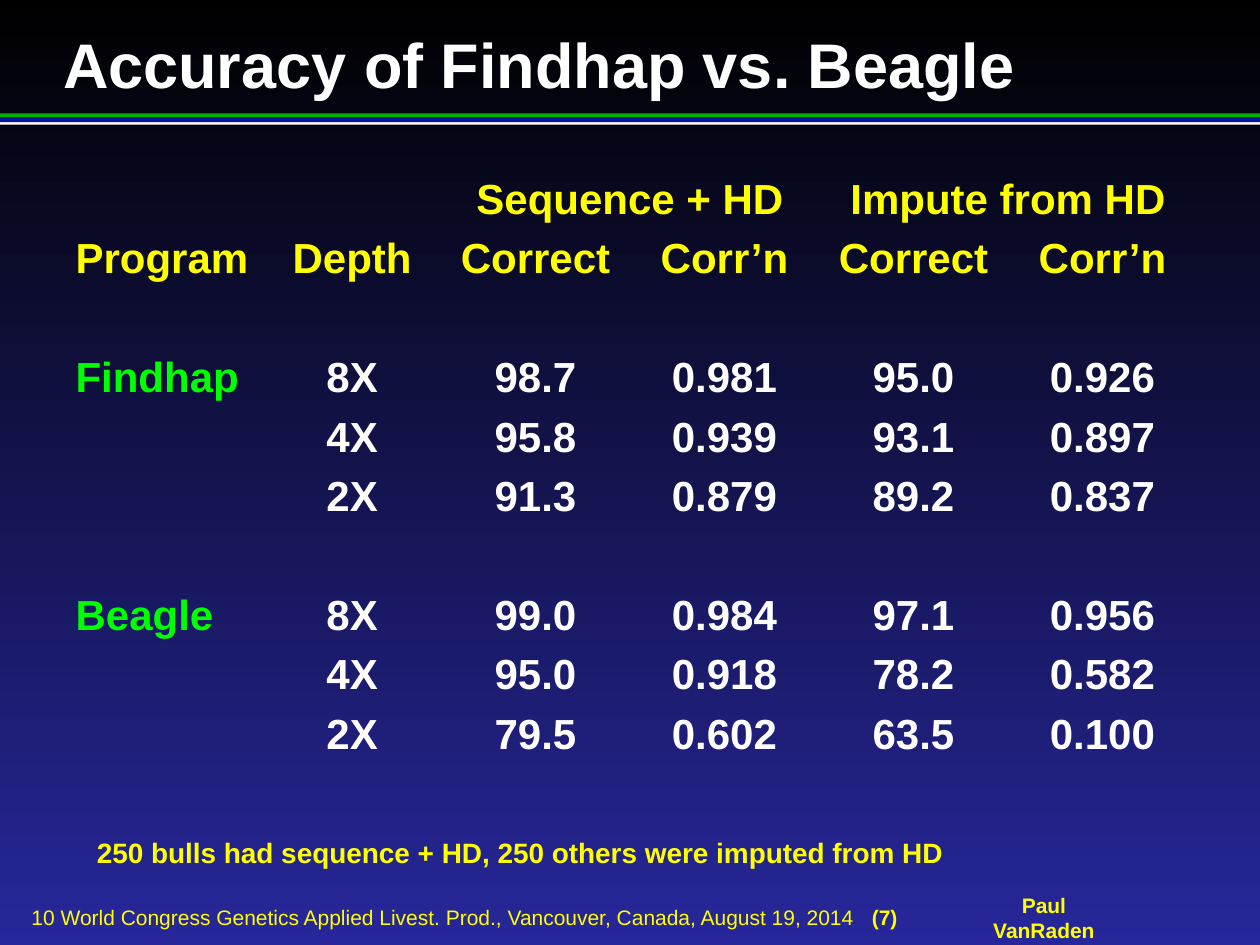
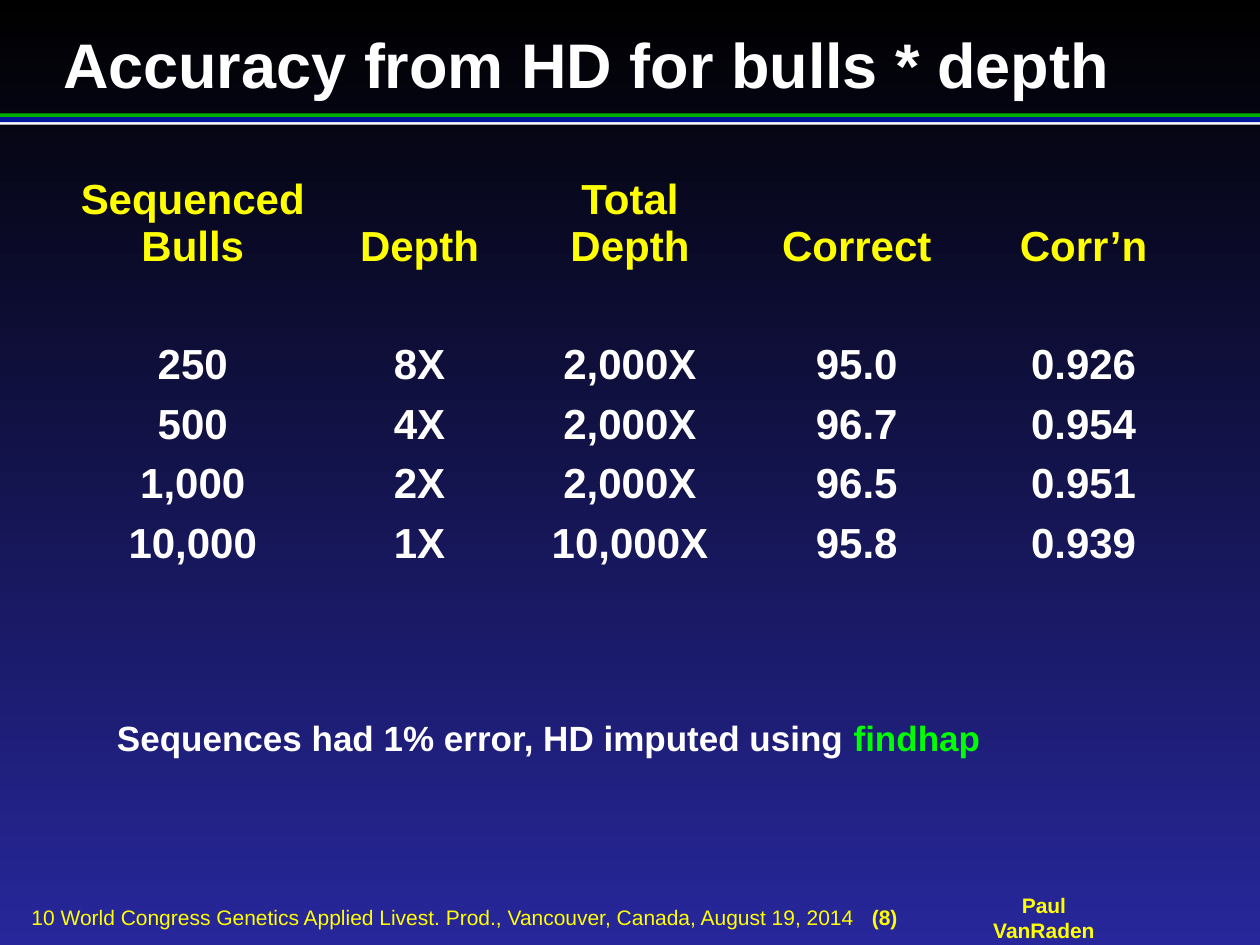
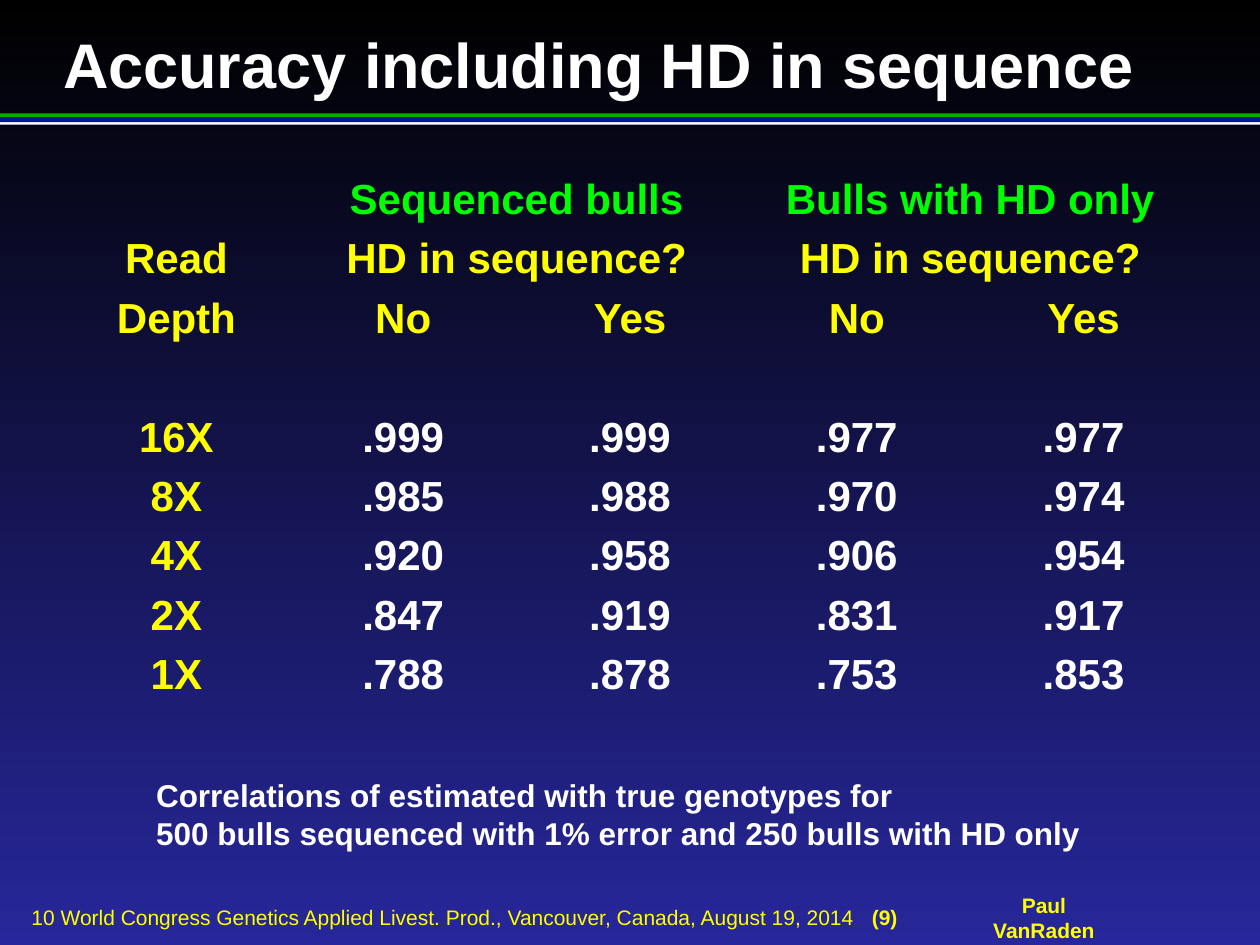
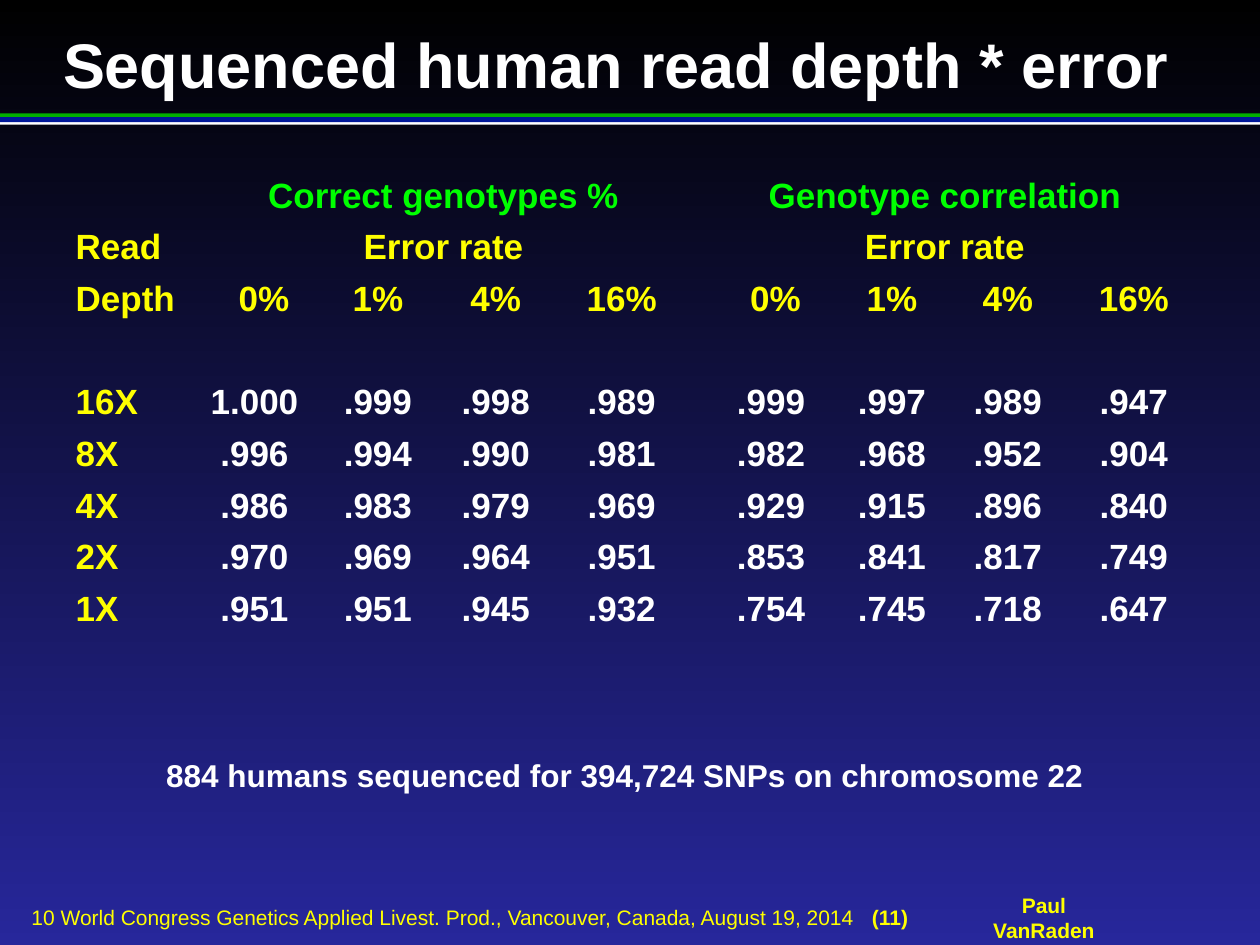
from lxml import etree
from pptx import Presentation
from pptx.dml.color import RGBColor
from pptx.enum.shapes import MSO_SHAPE
from pptx.enum.text import MSO_ANCHOR, PP_ALIGN
from pptx.oxml.ns import qn
from pptx.util import Inches, Pt

COLOURS = {
    "black": "000000",
    "indigo": "27279B",
    "band green": "01AF00",
    "band blue": "001799",
    "white": "FFFFFF",
    "yellow": "FFFF00",
    "green": "00FF00",
}
FONT = "Arial"
NO_GRID_STYLE = "{2D5ABB26-0587-4C30-8999-92F81FD0307C}"
BANDS = [("band green", 0.9, 0.03), ("white", 0.96, 0.03), ("band blue", 0.93, 0.04)]
AUTHOR = "Paul VanRaden"
CONFERENCE = "10 World Congress Genetics Applied Livest. Prod., Vancouver, Canada, August 19, 2014"

# In table rows, None continues the cell to its left.
# row_colours gives the leading rows; first_column and white colour the rest.
SLIDES = [
    {
        "title": "Accuracy of Findhap vs. Beagle",
        "number": 7,
        "columns": [1.59, 1.41, 1.5, 1.5, 1.5, 1.5],
        "size": 24,
        "row_height": 0.47,
        "row_colours": ["yellow", "yellow"],
        "first_column": "green",
        "left_aligned": True,
        "rows": [
            ["", "", "Sequence + HD", None, "Impute from HD", None],
            ["Program", "Depth", "Correct", "Corr’n", "Correct", "Corr’n"],
            [""] * 6,
            ["Findhap", "8X", "98.7", "0.981", "95.0", "0.926"],
            ["", "4X", "95.8", "0.939", "93.1", "0.897"],
            ["", "2X", "91.3", "0.879", "89.2", "0.837"],
            [""] * 6,
            ["Beagle", "8X", "99.0", "0.984", "97.1", "0.956"],
            ["", "4X", "95.0", "0.918", "78.2", "0.582"],
            ["", "2X", "79.5", "0.602", "63.5", "0.100"],
        ],
        "note": [[("250 bulls had sequence + HD, 250 others were imputed from HD", "yellow")]],
        "note_size": 16,
        "note_box": (0.67, 6.58, 7.07, 0.37),
    },
    {
        "title": "Accuracy from HD for bulls * depth",
        "number": 8,
        "columns": [2.06, 1.54, 1.8, 1.8, 1.8],
        "size": 24,
        "row_height": 0.47,
        "header_height": 0.84,
        "row_colours": ["yellow"],
        "first_column": "white",
        "rows": [
            ["Sequenced Bulls", "Depth", "Total Depth", "Correct", "Corr’n"],
            [""] * 5,
            ["250", "8X", "2,000X", "95.0", "0.926"],
            ["500", "4X", "2,000X", "96.7", "0.954"],
            ["1,000", "2X", "2,000X", "96.5", "0.951"],
            ["10,000", "1X", "10,000X", "95.8", "0.939"],
        ],
        "note": [[("Sequences had 1% error, HD imputed using ", "white"), ("findhap", "green")]],
        "note_size": 20,
        "note_box": (0.83, 5.64, 8.19, 0.44),
    },
    {
        "title": "Accuracy including HD in sequence",
        "number": 9,
        "columns": [1.8] * 5,
        "size": 24,
        "row_height": 0.47,
        "row_colours": ["green", "yellow", "yellow"],
        "first_column": "yellow",
        "rows": [
            ["", "Sequenced bulls", None, "Bulls with HD only", None],
            ["Read", "HD in sequence?", None, "HD in sequence?", None],
            ["Depth", "No", "Yes", "No", "Yes"],
            [""] * 5,
            ["16X", ".999", ".999", ".977", ".977"],
            ["8X", ".985", ".988", ".970", ".974"],
            ["4X", ".920", ".958", ".906", ".954"],
            ["2X", ".847", ".919", ".831", ".917"],
            ["1X", ".788", ".878", ".753", ".853"],
        ],
        "note": [
            [("Correlations of estimated with true genotypes for", "white")],
            [("500 bulls sequenced with 1% error and 250 bulls with HD only", "white")],
        ],
        "note_size": 18,
        "note_box": (1.14, 6.11, 7.68, 0.71),
    },
    {
        "title": "Sequenced human read depth * error",
        "number": 11,
        "columns": [1.04, 0.96, 1, 0.87, 1.13, 1.16, 0.84, 1, 1],
        "size": 20,
        "row_height": 0.41,
        "row_colours": ["green", "yellow", "yellow"],
        "first_column": "yellow",
        "left_aligned": True,
        "left_insets": {(2, 1): 0.25, (2, 5): 0.25, **{(row, 5): 0.18 for row in range(4, 9)}},
        "rows": [
            ["", "Correct genotypes %", None, None, None, "Genotype correlation", None, None, None],
            ["Read", "Error rate", None, None, None, "Error rate", None, None, None],
            ["Depth"] + ["0%", "1%", "4%", "16%"] * 2,
            [""] * 9,
            ["16X", "1.000", ".999", ".998", ".989", ".999", ".997", ".989", ".947"],
            ["8X", ".996", ".994", ".990", ".981", ".982", ".968", ".952", ".904"],
            ["4X", ".986", ".983", ".979", ".969", ".929", ".915", ".896", ".840"],
            ["2X", ".970", ".969", ".964", ".951", ".853", ".841", ".817", ".749"],
            ["1X", ".951", ".951", ".945", ".932", ".754", ".745", ".718", ".647"],
        ],
        "note": [[("884 humans sequenced for 394,724 SNPs on chromosome 22", "white")]],
        "note_size": 18,
        "note_box": (1.22, 5.95, 7.62, 0.4),
    },
]


def rgb(name):
    return RGBColor.from_string(COLOURS[name])


def format_run(run, size, colour, bold=True):
    run.font.name = FONT
    run.font.size = Pt(size)
    run.font.bold = bold
    run.font.color.rgb = rgb(colour)


def add_run(paragraph, text, size, colour, bold=True):
    run = paragraph.add_run()
    run.text = text
    format_run(run, size, colour, bold)


def clear_margins(text_frame, side=0):
    text_frame.margin_left = text_frame.margin_right = Inches(side)
    text_frame.margin_top = text_frame.margin_bottom = 0


def add_text_box(slide, box):
    shape = slide.shapes.add_textbox(*map(Inches, box))
    shape.text_frame.word_wrap = True
    return shape


def set_background(master):
    fill = master.background.fill
    fill.gradient()
    fill.gradient_angle = 270
    for stop, colour in zip(fill.gradient_stops, ("black", "indigo")):
        stop.color.rgb = rgb(colour)


def fill_master(master, slide):
    """Draw the bands and the author on a slide, then move them to the master."""
    shared = []
    for colour, top, height in BANDS:
        band = slide.shapes.add_shape(
            MSO_SHAPE.RECTANGLE, 0, Inches(top), Inches(10), Inches(height))
        band.shadow.inherit = False
        band.fill.solid()
        band.fill.fore_color.rgb = rgb(colour)
        band.line.fill.background()
        shared.append(band)

    author = add_text_box(slide, (7.69, 7.18, 1.19, 0.2))
    clear_margins(author.text_frame, 0.1)
    author.text_frame.vertical_anchor = MSO_ANCHOR.MIDDLE
    paragraph = author.text_frame.paragraphs[0]
    paragraph.alignment = PP_ALIGN.CENTER
    add_run(paragraph, AUTHOR, 12, "yellow")
    shared.append(author)

    for shape in shared:
        master.shapes._spTree.append(shape._element)


def set_title(slide, text):
    title = slide.shapes.title
    title.left, title.top, title.width, title.height = map(Inches, (0.5, 0.2, 9, 0.6))
    text_frame = title.text_frame
    text_frame.text = text
    clear_margins(text_frame)
    text_frame.vertical_anchor = MSO_ANCHOR.BOTTOM
    paragraph = text_frame.paragraphs[0]
    paragraph.alignment = PP_ALIGN.LEFT
    format_run(paragraph.runs[0], 36, "white")


def add_footer(slide, number):
    text_frame = add_text_box(slide, (0.25, 7.18, 7.27, 0.2)).text_frame
    clear_margins(text_frame)
    text_frame.vertical_anchor = MSO_ANCHOR.MIDDLE
    paragraph = text_frame.paragraphs[0]
    tabs = etree.SubElement(paragraph._p.get_or_add_pPr(), qn("a:tabLst"))
    etree.SubElement(tabs, qn("a:tab"), pos=str(Inches(6.67)), algn="l")
    add_run(paragraph, CONFERENCE + "\t", 12, "yellow", bold=False)
    add_run(paragraph, f"({number})", 12, "yellow")


def add_accuracy_table(slide, content):
    rows, columns = content["rows"], content["columns"]
    heights = [content["row_height"]] * len(rows)
    heights[0] = content.get("header_height", heights[0])
    frame = slide.shapes.add_table(
        len(rows), len(columns), Inches(0.5), Inches(1.35), Inches(9), Inches(sum(heights)))
    table = frame.table
    table.first_row = table.horz_banding = False
    table._tbl.tblPr.find(qn("a:tableStyleId")).text = NO_GRID_STYLE
    for column, width in zip(table.columns, columns):
        column.width = Inches(width)
    for row, height in zip(table.rows, heights):
        row.height = Inches(height)

    row_colours = content["row_colours"]
    insets = content.get("left_insets", {})
    for row_index, row in enumerate(rows):
        for column_index, text in enumerate(row):
            cell = table.cell(row_index, column_index)
            cell.fill.background()
            if not text:
                continue
            last = column_index
            while last + 1 < len(row) and row[last + 1] is None:
                last += 1
            if last > column_index:
                cell.merge(table.cell(row_index, last))
            if row_index < len(row_colours):
                colour = row_colours[row_index]
                cell.vertical_anchor = MSO_ANCHOR.BOTTOM
            else:
                colour = "white" if column_index else content["first_column"]
            if (row_index, column_index) in insets:
                cell.margin_left = Inches(insets[row_index, column_index])
            cell.text_frame.text = text
            paragraph = cell.text_frame.paragraphs[0]
            to_left = column_index == 0 and content.get("left_aligned")
            paragraph.alignment = PP_ALIGN.LEFT if to_left else PP_ALIGN.CENTER
            format_run(paragraph.runs[0], content["size"], colour)


def add_note(slide, content):
    text_frame = add_text_box(slide, content["note_box"]).text_frame
    for index, runs in enumerate(content["note"]):
        paragraph = text_frame.add_paragraph() if index else text_frame.paragraphs[0]
        for text, colour in runs:
            add_run(paragraph, text, content["note_size"], colour)


def main():
    presentation = Presentation()
    presentation.slide_width, presentation.slide_height = Inches(10), Inches(7.5)
    master = presentation.slide_master
    set_background(master)
    for index, content in enumerate(SLIDES):
        slide = presentation.slides.add_slide(presentation.slide_layouts[5])
        if index == 0:
            fill_master(master, slide)
        set_title(slide, content["title"])
        add_accuracy_table(slide, content)
        add_note(slide, content)
        add_footer(slide, content["number"])
    presentation.save("out.pptx")


if __name__ == "__main__":
    main()
